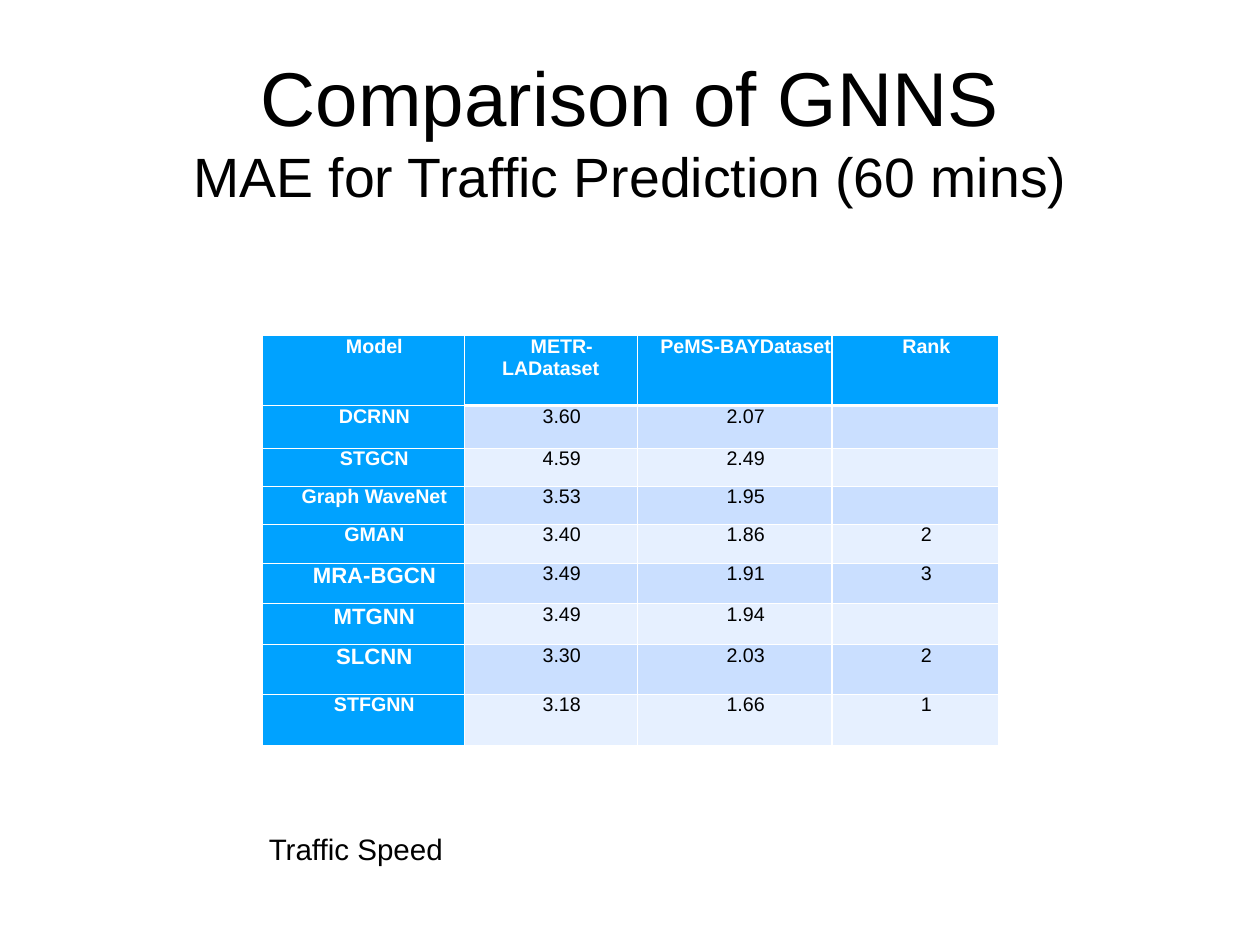
from lxml import etree
from pptx import Presentation
from pptx.dml.color import RGBColor
from pptx.enum import text
from pptx.oxml import ns
from pptx.util import Inches, Pt

BLACK, WHITE, BLUE = "000000", "FFFFFF", "00A2FF"
BANDS = ("CADFFF", "E6F0FF")
COLUMN_WIDTHS = (2.28, 1.95, 2.2, 1.88)
ROW_HEIGHTS = (0.79, 0.48, 0.43, 0.43, 0.44, 0.46, 0.46, 0.56, 0.58)
RESULTS = (
    ("Model", "METR-LADataset", "PeMS-BAYDataset", "Rank"),
    ("DCRNN", "3.60", "2.07", ""),
    ("STGCN", "4.59", "2.49", ""),
    ("Graph WaveNet", "3.53", "1.95", ""),
    ("GMAN", "3.40", "1.86", "2"),
    ("MRA-BGCN", "3.49", "1.91", "3"),
    ("MTGNN", "3.49", "1.94", ""),
    ("SLCNN", "3.30", "2.03", "2"),
    ("STFGNN", "3.18", "1.66", "1"),
)
LARGER_MODELS = ("MRA-BGCN", "MTGNN", "SLCNN")


def color(value):
    return RGBColor.from_string(value)


def add_run(paragraph, words, size, font_color=BLACK, bold=False):
    paragraph.alignment = text.PP_ALIGN.CENTER
    run = paragraph.add_run()
    run.text = words
    run.font.name = "Arial"
    run.font.size = Pt(size)
    run.font.bold = bold
    run.font.color.rgb = color(font_color)


def set_frame(frame, wrap):
    frame.margin_left = frame.margin_right = Inches(0.06)
    frame.margin_top = frame.margin_bottom = Inches(0.06)
    frame.vertical_anchor = text.MSO_ANCHOR.MIDDLE
    frame.auto_size = text.MSO_AUTO_SIZE.NONE
    frame.word_wrap = wrap


def add_borders(cell, widths):
    """Draw white borders; widths are points for left, right, top, bottom."""
    properties = cell._tc.get_or_add_tcPr()
    for side, width in zip("LRTB", widths):
        line = etree.SubElement(properties, ns.qn(f"a:ln{side}"), w=str(Pt(width)))
        fill = etree.SubElement(line, ns.qn("a:solidFill"))
        etree.SubElement(fill, ns.qn("a:srgbClr"), val=WHITE)


def add_title(slide):
    title = slide.shapes.title
    title.left, title.top = Inches(1.04), Inches(0.28)
    title.width, title.height = Inches(12.14), Inches(2.36)
    frame = title.text_frame
    set_frame(frame, True)
    add_run(frame.paragraphs[0], "Comparison of GNNS", 62)
    add_run(frame.add_paragraph(), "MAE for Traffic Prediction (60 mins)", 45)


def fill_cell(cell, words, row, column):
    is_heading = row == 0 or column == 0
    cell.margin_left = cell.margin_right = 0
    cell.margin_top = cell.margin_bottom = 0
    top = 3 if row == 1 and column > 0 else 1
    bottom = 3 if row == 0 and column > 0 else 1
    add_borders(cell, (1, 1, top, bottom))
    cell.fill.solid()
    cell.fill.fore_color.rgb = color(BLUE if is_heading else BANDS[(row - 1) % 2])
    if words:
        paragraph = cell.text_frame.paragraphs[0]
        size = 18 if words in LARGER_MODELS else 16
        add_run(paragraph, words, size, WHITE if is_heading else BLACK, is_heading)
        paragraph._p.get_or_add_pPr().set("indent", str(Inches(0.25)))


def add_results_table(slide):
    frame = slide.shapes.add_table(
        len(RESULTS), len(COLUMN_WIDTHS), Inches(2.96), Inches(3.79),
        Inches(sum(COLUMN_WIDTHS)), Inches(sum(ROW_HEIGHTS)))
    table = frame.table
    table.first_col = True
    for column, width in zip(table.columns, COLUMN_WIDTHS):
        column.width = Inches(width)
    for row, height in zip(table.rows, ROW_HEIGHTS):
        row.height = Inches(height)
    for row, entries in enumerate(RESULTS):
        for column, words in enumerate(entries):
            fill_cell(table.cell(row, column), words, row, column)


def add_caption(slide):
    caption = slide.shapes.add_textbox(
        Inches(2.97), Inches(9.33), Inches(2.09), Inches(0.51))
    set_frame(caption.text_frame, False)
    add_run(caption.text_frame.paragraphs[0], "Traffic Speed", 24)


def main():
    presentation = Presentation()
    presentation.slide_width = Inches(14.22)
    presentation.slide_height = Inches(10.67)
    slide = presentation.slides.add_slide(presentation.slide_layouts[5])
    add_title(slide)
    add_results_table(slide)
    add_caption(slide)
    presentation.save("out.pptx")


if __name__ == "__main__":
    main()
